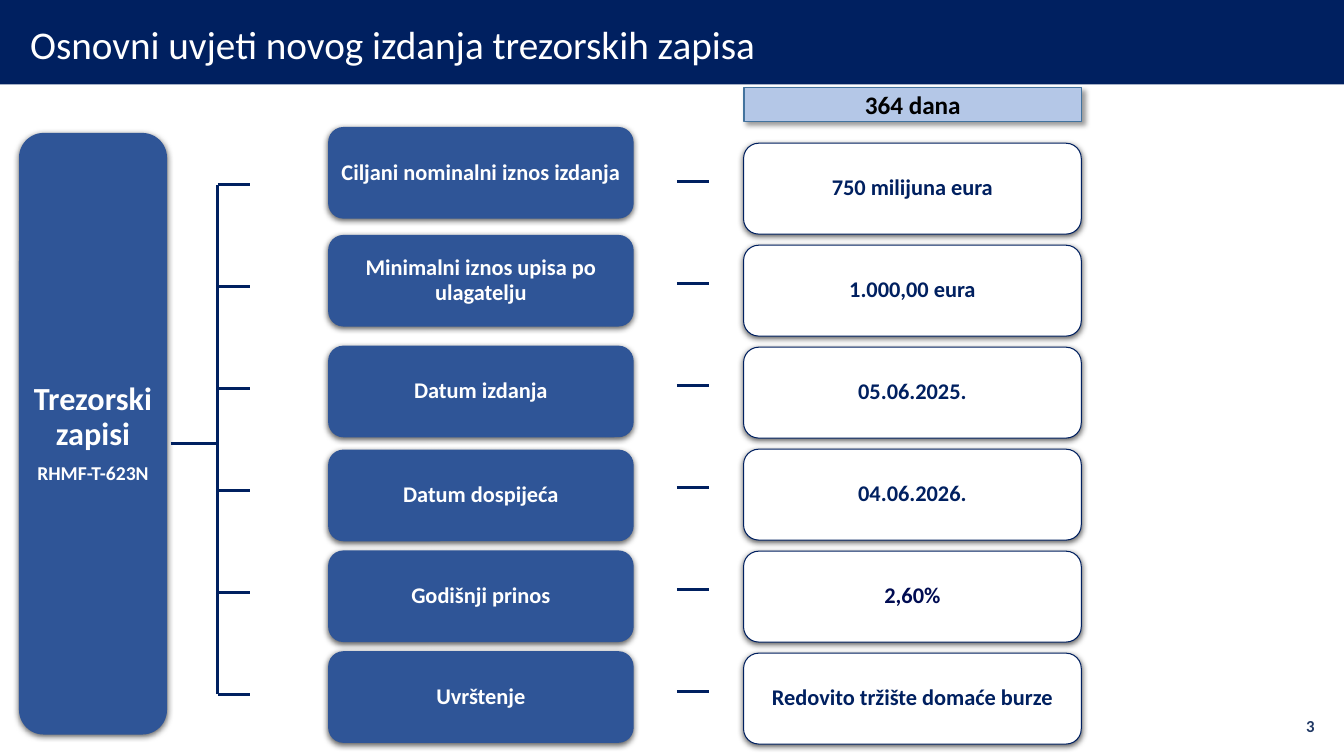
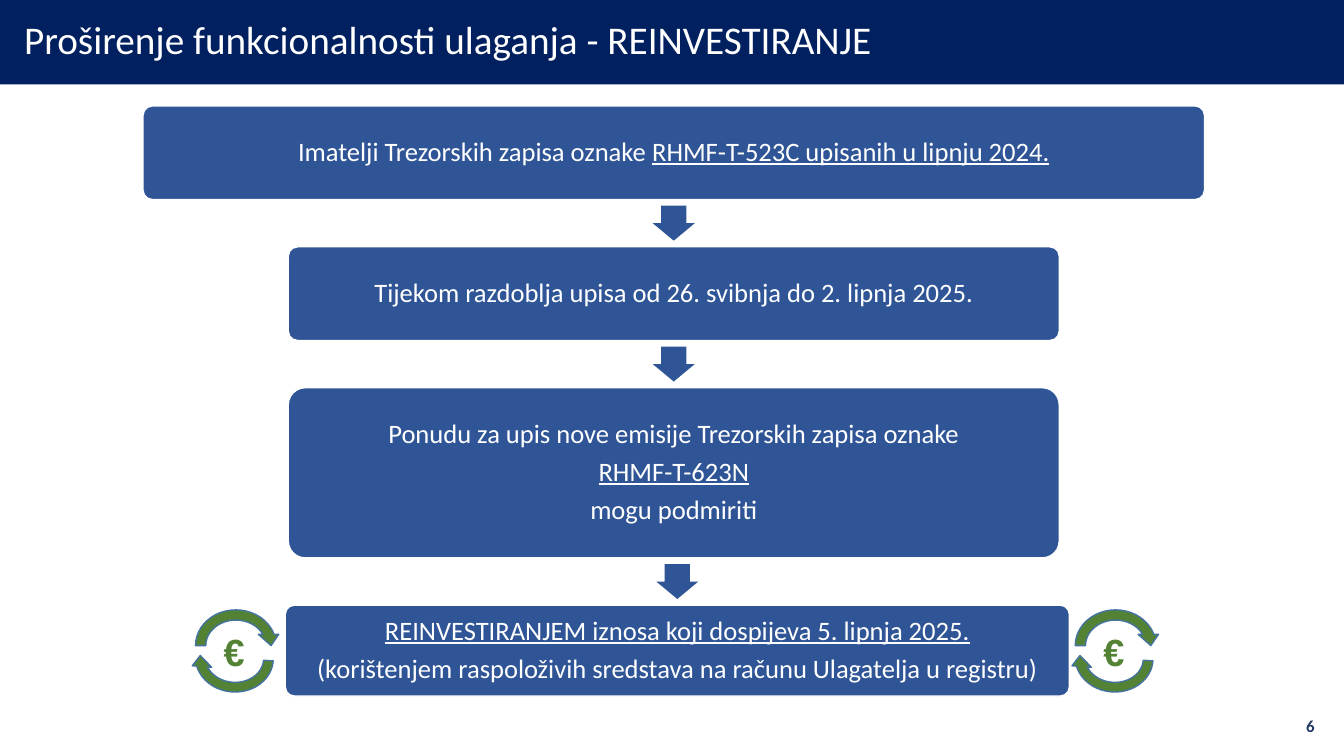
from lxml.etree import SubElement
from pptx import Presentation
from pptx.dml.color import RGBColor
from pptx.enum.shapes import MSO_CONNECTOR as Link, MSO_SHAPE as Form
from pptx.enum.text import MSO_ANCHOR as Anchor, PP_ALIGN as Align
from pptx.oxml.ns import qn
from pptx.util import Cm, Pt

HUES = {
    "navy": "002060", "ink": "000C52", "blue": "2F5597", "pale": "B4C7E7",
    "edge": "43739E", "green": "548235", "page": "203864",
    "white": "FFFFFF", "black": "000000",
}
SOFT = (4.5, 1.5, 90, 63)
HARD = (4, 3, 45, 40)

TERMS = [
    (3.2, "Ciljani nominalni iznos izdanja", "750 milijuna eura", "navy"),
    (5.92, "Minimalni iznos upisa po ulagatelju", "1.000,00 eura", "navy"),
    (8.71, "Datum izdanja", "05.06.2025.", "navy"),
    (11.33, "Datum dospijeća", "04.06.2026.", "navy"),
    (13.87, "Godišnji prinos", "2,60%", "ink"),
    (16.41, "Uvrštenje", "Redovito tržište domaće burze", "navy"),
]
PITCH = 2.57

STEPS = [
    (16.98, 26.75, 2.36, [[("Imatelji Trezorskih zapisa oznake ", False),
                           ("RHMF-T-523C upisanih u lipnju 2024.", True)]]),
    (16.98, 19.43, 2.36,
     [[("Tijekom razdoblja upisa od 26. svibnja do 2. lipnja 2025.", False)]]),
    (16.98, 19.43, 4.29,
     [[("Ponudu za upis nove emisije Trezorskih zapisa oznake", False)],
      [("RHMF-T-623N", True)],
      [("mogu podmiriti", False)]]),
    (17.07, 19.76, 2.29,
     [[("REINVESTIRANJEM iznosa koji dospijeva 5. lipnja 2025.", True)],
      [("(korištenjem raspoloživih sredstava na računu Ulagatelja u registru)",
        False)]]),
]


def hue(name):
    return RGBColor.from_string(HUES[name])


def shade(shape, blur, dist, turn, alpha):
    fx = shape._element.spPr.find(qn("a:effectLst"))
    cast = SubElement(fx, qn("a:outerShdw"), blurRad=str(int(Pt(blur))),
                      dist=str(int(Pt(dist))), dir=str(turn * 60000),
                      algn="ctr", rotWithShape="0")
    tint = SubElement(cast, qn("a:srgbClr"), val=HUES["black"])
    SubElement(tint, qn("a:alpha"), val=str(alpha * 1000))


def block(page, form, box, fill, line=None, wide=1, cast=None):
    shape = page.shapes.add_shape(form, *map(Cm, box))
    shape.shadow.inherit = False
    shape.fill.solid()
    shape.fill.fore_color.rgb = hue(fill)
    if line:
        shape.line.color.rgb = hue(line)
        shape.line.width = Pt(wide)
    else:
        shape.line.fill.background()
    if cast:
        shade(shape, *cast)
    return shape


def write(shape, paras, tone, sizes, bold=False, align=Align.CENTER,
          pad=None, lead=0.9, after=0.35, face="Calibri", wrap=True):
    frame = shape.text_frame
    frame.word_wrap = wrap
    frame.vertical_anchor = Anchor.MIDDLE
    if pad is not None:
        frame.margin_left = frame.margin_right = Cm(pad)
        frame.margin_top = frame.margin_bottom = Cm(pad)
    for i, (parts, size) in enumerate(zip(paras, sizes)):
        para = frame.add_paragraph() if i else frame.paragraphs[0]
        para.alignment = align
        para.line_spacing = lead
        para.space_after = Pt(round(size * after, 1))
        for text, under in parts:
            run = para.add_run()
            run.text = text
            font = run.font
            font.name, font.size, font.bold = face, Pt(size), bold
            font.color.rgb = hue(tone)
            if under:
                font.underline = True


def label(page, box, text, tone, size, **style):
    area = page.shapes.add_textbox(*map(Cm, box))
    write(area, [[(text, False)]], tone, [size], after=0, **style)


def rule(page, x, y, x2, y2):
    line = page.shapes.add_connector(Link.STRAIGHT, *map(Cm, (x, y, x2, y2)))
    line.line.color.rgb = hue("navy")
    line.line.width = Pt(2.25)
    SubElement(line._element.spPr, qn("a:effectLst"))


def base(deck, title, x, y, number):
    page = deck.slides.add_slide(deck.slide_layouts[6])
    block(page, Form.RECTANGLE, (0, 0, 33.87, 2.13), "navy")
    label(page, (x, y, 29.21, 1.8), title, "white", 28, align=Align.LEFT)
    label(page, (32.26, 17.78, 1.12, 1.02), number, "page", 12,
          bold=True, align=Align.RIGHT, lead=1)
    return page


def card(page, box, text, fill, tone, line=None):
    shape = block(page, Form.ROUNDED_RECTANGLE, box, fill, line, 0.75, SOFT)
    write(shape, [[(text, False)]], tone, [16], bold=True, pad=0.03)


def root(page, box):
    shape = block(page, Form.ROUNDED_RECTANGLE, box, "blue", cast=SOFT)
    write(shape, [[("Trezorski zapisi", False)], [("RHMF-T-623N", False)]],
          "white", [23, 14], bold=True, pad=0.05)


def tree(page, x, y):
    span = PITCH * (len(TERMS) - 1)
    rule(page, x - 1.19, y + 6.53, x, y + 6.53)
    rule(page, x, y, x, y + span)
    for i in range(len(TERMS)):
        rule(page, x, y + i * PITCH, x + 0.81, y + i * PITCH)


def terms(page, x, y):
    for i, (top, name, value, tone) in enumerate(TERMS):
        row = y + i * PITCH
        card(page, (x, top, 7.7, 2.31), name, "blue", "white")
        rule(page, x + 8.79, row + 0.96, x + 9.6, row + 0.96)
        card(page, (x + 10.47, row, 8.51, 2.29), value, "white", tone, "navy")


def span(page, box):
    shape = block(page, Form.RECTANGLE, box, "pale", "edge", cast=HARD)
    write(shape, [[("364 dana", False)]], "black", [18], bold=True,
          lead=1, after=0)


def flow(page, y, gap):
    for i, (mid, wide, high, paras) in enumerate(STEPS):
        if i:
            arrow = block(page, Form.DOWN_ARROW,
                          (mid - 0.53, y - gap / 2 - 0.44, 1.06, 0.88), "blue")
            arrow.adjustments[0], arrow.adjustments[1] = 0.6, 0.5
        shape = block(page, Form.ROUNDED_RECTANGLE,
                      (mid - wide / 2, y, wide, high), "blue", "white")
        shape.adjustments[0] = 0.1
        write(shape, paras, "white", [19] * len(paras), pad=0.2)
        y += high + gap


def cycle(page, x, y):
    block(page, Form.CIRCULAR_ARROW, (x, y, 2.29, 2.06), "green", "edge")
    back = block(page, Form.CIRCULAR_ARROW, (x, y + 0.36, 2.21, 1.96),
                 "green", "edge")
    back.rotation = 184.3
    label(page, (x + 0.58, y + 0.46, 1.04, 1.42), "€", "green", 27,
          bold=True, lead=1, face="Arial", wrap=False)


def main():
    deck = Presentation()
    deck.slide_width, deck.slide_height = Cm(33.87), Cm(19.05)

    page = base(deck, "Osnovni uvjeti novog izdanja trezorskih zapisa",
                0.51, 0.28, "3")
    root(page, (0.48, 3.35, 3.73, 15.16))
    tree(page, 5.49, 4.65)
    terms(page, 8.27, 3.61)
    span(page, (18.75, 2.21, 8.51, 0.86))

    page = base(deck, "Proširenje funkcionalnosti ulaganja - REINVESTIRANJE",
                0.36, 0.15, "6")
    flow(page, 2.67, 1.19)
    for x in (26.97, 4.8):
        cycle(page, x, 15.24)

    deck.save("out.pptx")


if __name__ == "__main__":
    main()
